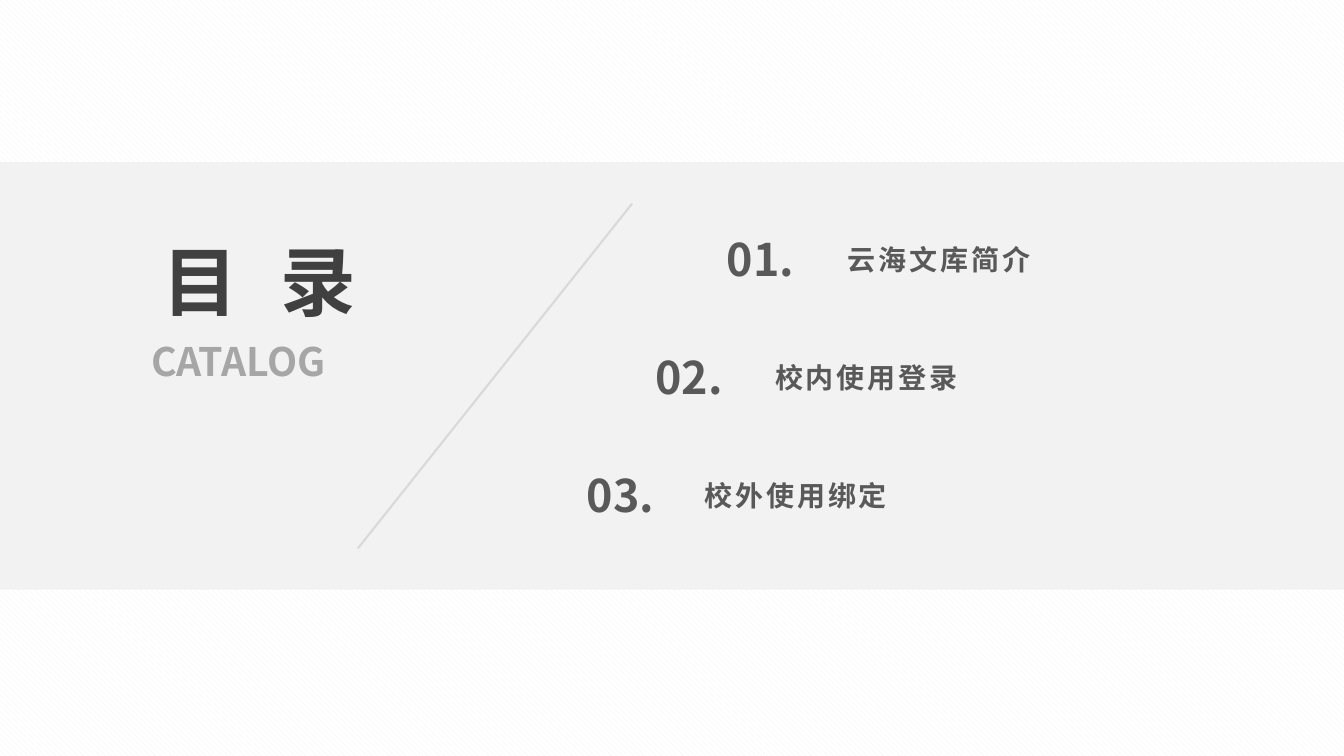
import pptx
import pptx.dml.color
import pptx.enum.dml
import pptx.enum.shapes
import pptx.enum.text
import pptx.oxml.ns
import pptx.util
from lxml import etree

Inches = pptx.util.Inches
RGBColor = pptx.dml.color.RGBColor
Align = pptx.enum.text.PP_ALIGN
Anchor = pptx.enum.text.MSO_ANCHOR

WHITE = RGBColor(0xFF, 0xFF, 0xFF)
PALE_GREY = RGBColor(0xF2, 0xF2, 0xF2)
LINE_GREY = RGBColor(0xD9, 0xD9, 0xD9)
MID_GREY = RGBColor(0xA6, 0xA6, 0xA6)
TEXT_GREY = RGBColor(0x59, 0x59, 0x59)
DARK_GREY = RGBColor(0x40, 0x40, 0x40)

HEADING_FONT = "Noto Sans CJK SC"
BODY_FONT = "Arial"
SLIDE_WIDTH, SLIDE_HEIGHT = 13.33, 7.5
BAND = (0, 1.61, SLIDE_WIDTH, 4.24)

# Left edges of number and label follow the slanted divider.
ENTRIES = [
    ("01.", 7.11, "云海文库简介", 8.31),
    ("02.", 6.4, "校内使用登录", 7.59),
    ("03.", 5.72, "校外使用绑定", 6.89),
]
ENTRY_PITCH = 1.17


def write_text(shape, text, *, size, color, font=HEADING_FONT, spacing=0,
               align=Align.LEFT, anchor=Anchor.TOP):
    """Fill a shape with one bold line; spacing between letters is in points."""
    frame = shape.text_frame
    frame.word_wrap = True
    frame.auto_size = pptx.enum.text.MSO_AUTO_SIZE.NONE
    frame.vertical_anchor = anchor
    paragraph = frame.paragraphs[0]
    paragraph.alignment = align
    run = paragraph.add_run()
    run.text = text
    run.font.size = pptx.util.Pt(size)
    run.font.bold = True
    run.font.color.rgb = color
    run.font.name = font
    properties = run.font._element
    if spacing:
        properties.set("spc", str(spacing * 100))
    east_asian = etree.SubElement(properties, pptx.oxml.ns.qn("a:ea"))
    east_asian.set("typeface", HEADING_FONT)


def add_text(slide, box, text, **text_format):
    shape = slide.shapes.add_textbox(*map(Inches, box))
    write_text(shape, text, **text_format)


def set_background(slide):
    fill = slide.background.fill
    fill.patterned()
    fill.pattern = pptx.enum.dml.MSO_PATTERN.WIDE_DOWNWARD_DIAGONAL
    fill.fore_color.rgb = PALE_GREY
    fill.back_color.rgb = WHITE


def add_band(slide, box):
    band = slide.shapes.add_shape(
        pptx.enum.shapes.MSO_SHAPE.RECTANGLE, *map(Inches, box))
    band.shadow.inherit = False
    band.fill.solid()
    band.fill.fore_color.rgb = PALE_GREY
    band.line.fill.background()


def add_heading(slide, box):
    left, top, width, height = box
    title = slide.shapes.title
    title.left, title.top = Inches(left), Inches(top)
    title.width, title.height = Inches(width), Inches(1.01)
    write_text(title, "目录", size=54, color=DARK_GREY, spacing=30,
               align=Align.CENTER, anchor=Anchor.BOTTOM)
    add_text(slide, (left + 0.37, top + height - 0.57, 2.29, 0.57), "CATALOG",
             size=28, color=MID_GREY, align=Align.CENTER)


def add_divider(slide, box):
    left, top, width, height = box
    divider = slide.shapes.add_connector(
        pptx.enum.shapes.MSO_CONNECTOR.STRAIGHT,
        Inches(left), Inches(top + height), Inches(left + width), Inches(top))
    divider.line.color.rgb = LINE_GREY
    divider.line.width = pptx.util.Pt(1.5)
    etree.SubElement(divider._element.spPr, pptx.oxml.ns.qn("a:effectLst"))


def add_entries(slide, top):
    for index, (number, number_left, label, label_left) in enumerate(ENTRIES):
        row_top = top + index * ENTRY_PITCH
        add_text(slide, (number_left, row_top, 0.99, 0.64), number,
                 size=32, color=TEXT_GREY)
        add_text(slide, (label_left, row_top + 0.1, 2.66, 0.44), label,
                 size=20, color=TEXT_GREY, font=BODY_FONT, spacing=2,
                 anchor=Anchor.MIDDLE)


def build_catalog_slide(presentation):
    slide = presentation.slides.add_slide(presentation.slide_layouts[5])
    set_background(slide)
    band_top = BAND[1]
    add_band(slide, BAND)
    # The title placeholder must lie in front of the band.
    slide.shapes._spTree.append(slide.shapes.title._element)
    add_heading(slide, (0.85, band_top + 0.66, 3.44, 1.6))
    add_divider(slide, (3.55, band_top + 0.41, 2.72, 3.42))
    add_entries(slide, band_top + 0.64)


def main():
    presentation = pptx.Presentation()
    presentation.slide_width = Inches(SLIDE_WIDTH)
    presentation.slide_height = Inches(SLIDE_HEIGHT)
    build_catalog_slide(presentation)
    presentation.save("out.pptx")


if __name__ == "__main__":
    main()
